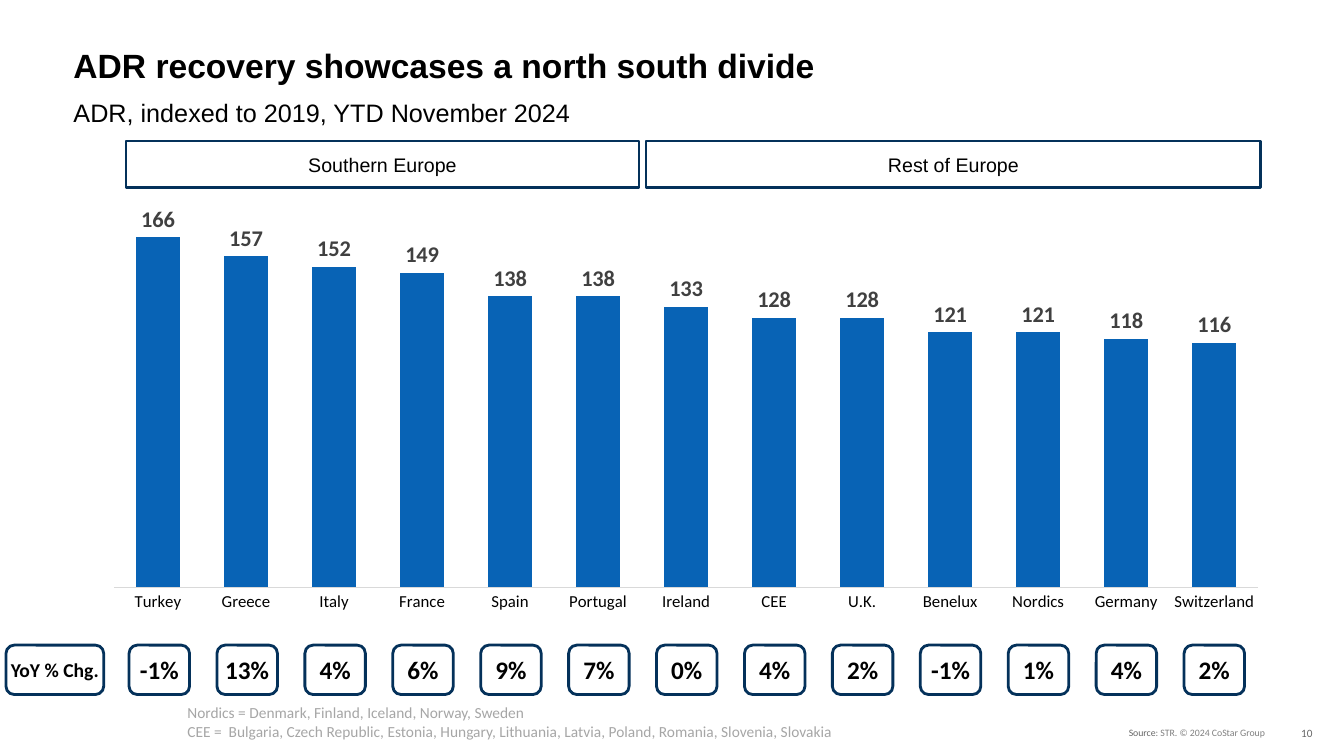
from lxml import etree
from pptx import Presentation
from pptx.chart.data import CategoryChartData
from pptx.dml.color import RGBColor
from pptx.enum.chart import XL_CHART_TYPE, XL_LABEL_POSITION, XL_TICK_MARK
from pptx.enum.shapes import MSO_SHAPE
from pptx.enum.text import MSO_ANCHOR, PP_ALIGN
from pptx.oxml.ns import qn
from pptx.util import Pt

COLUMNS = XL_CHART_TYPE.COLUMN_CLUSTERED
OUTSIDE_END = XL_LABEL_POSITION.OUTSIDE_END
NO_TICK = XL_TICK_MARK.NONE
RECTANGLE = MSO_SHAPE.RECTANGLE
ROUNDED = MSO_SHAPE.ROUNDED_RECTANGLE
TOP, MIDDLE = MSO_ANCHOR.TOP, MSO_ANCHOR.MIDDLE
LEFT, CENTER = PP_ALIGN.LEFT, PP_ALIGN.CENTER

BLACK = RGBColor(0x00, 0x00, 0x00)
WHITE = RGBColor(0xFF, 0xFF, 0xFF)
NAVY = RGBColor(0x04, 0x31, 0x5A)
BLUE = RGBColor(0x08, 0x63, 0xB5)
LABEL_GRAY = RGBColor(0x40, 0x40, 0x40)
FOOTER_GRAY = RGBColor(0x66, 0x66, 0x66)
SOURCE_GRAY = RGBColor(0x80, 0x80, 0x80)
NOTE_GRAY = RGBColor(0xA6, 0xA6, 0xA6)
AXIS_GRAY = RGBColor(0xD9, 0xD9, 0xD9)

MARKETS = [
    ("Turkey", 166, "-1%"), ("Greece", 157, "13%"), ("Italy", 152, "4%"),
    ("France", 149, "6%"), ("Spain", 138, "9%"), ("Portugal", 138, "7%"),
    ("Ireland", 133, "0%"), ("CEE", 128, "4%"), ("U.K.", 128, "2%"),
    ("Benelux", 121, "-1%"), ("Nordics", 121, "1%"), ("Germany", 118, "4%"),
    ("Switzerland", 116, "2%"),
]


def write(box, lines, size, font, bold=False, align=LEFT, anchor=TOP, spacing=None):
    frame = box.text_frame
    frame.vertical_anchor = anchor
    for index, line in enumerate(lines):
        para = frame.add_paragraph() if index else frame.paragraphs[0]
        para.alignment = align
        para.line_spacing = spacing
        for text, color in line:
            span = para.add_run()
            span.text = text
            span.font.size = Pt(size)
            span.font.name = font
            span.font.bold = bold
            span.font.color.rgb = color


def outlined(kind, left, top, width, height):
    box = page.shapes.add_shape(kind, Pt(left), Pt(top), Pt(width), Pt(height))
    box.shadow.inherit = False
    box.fill.solid()
    box.fill.fore_color.rgb = WHITE
    box.line.color.rgb = NAVY
    box.line.width = Pt(2)
    return box


deck = Presentation()
deck.slide_width, deck.slide_height = Pt(960), Pt(540)
page = deck.slides.add_slide(deck.slide_layouts[6])

data = CategoryChartData(number_format="0")
data.categories = [name for name, index, change in MARKETS]
data.add_series("Series 1", [index for name, index, change in MARKETS])
chart = page.shapes.add_chart(COLUMNS, Pt(46), Pt(107.3), Pt(864), Pt(368), data).chart
chart.has_legend = False
chart.has_title = False
chart.font.name = "Calibri"
chart.font.size = Pt(10)
chart.font.color.rgb = BLACK

plot = chart.plots[0]
plot.gap_width = 100
plot.overlap = -27
plot.vary_by_categories = False
bars = plot.series[0]
bars.format.fill.solid()
bars.format.fill.fore_color.rgb = BLUE
labels = bars.data_labels
labels.show_value = True
labels.position = OUTSIDE_END
labels.number_format = "#,##0"
labels.number_format_is_linked = False
labels.font.name = "Calibri"
labels.font.size = Pt(16)
labels.font.bold = True
labels.font.color.rgb = LABEL_GRAY

names = chart.category_axis
names.major_tick_mark = NO_TICK
names.minor_tick_mark = NO_TICK
names.tick_labels.font.name = "Calibri"
names.tick_labels.font.size = Pt(12)
names.tick_labels.font.color.rgb = BLACK
names.format.line.color.rgb = AXIS_GRAY
names.format.line.width = Pt(0.75)
scale = chart.value_axis
scale.visible = False
scale.has_major_gridlines = False
scale.minimum_scale = 0
scale.maximum_scale = 180

plot_area = chart.plots[0]._element.getparent()
for old_layout in plot_area.findall(qn("c:layout")):
    plot_area.remove(old_layout)
layout = etree.Element(qn("c:layout"))
plot_area.insert(0, layout)
manual = etree.SubElement(layout, qn("c:manualLayout"))
for tag, value in [("layoutTarget", "inner"), ("xMode", "edge"), ("yMode", "edge"),
                   ("x", "0.041"), ("y", "0.112"), ("w", "0.946"), ("h", "0.737")]:
    etree.SubElement(manual, qn("c:" + tag)).set("val", value)

title = [[("ADR recovery showcases a north south divide", BLACK)]]
subtitle = [[("ADR, indexed to 2019, YTD November 2024", BLACK)]]
notes = [
    [("Nordics = Denmark, Finland, Iceland, Norway, Sweden", NOTE_GRAY)],
    [("CEE =  Bulgaria, Czech Republic, Estonia, Hungary, Lithuania, Latvia, "
      "Poland, Romania, Slovenia, Slovakia", NOTE_GRAY)],
]
source = [[("Source", FOOTER_GRAY), (": STR. © 2024 CoStar Group", SOURCE_GRAY)]]
number = [[("10", FOOTER_GRAY)]]
for lines, left, top, width, height, size, font, bold, anchor, spacing in [
    (title, 45.4, 33.8, 900, 27.4, 24, "Arial", True, MIDDLE, Pt(26.7)),
    (subtitle, 45.4, 61.2, 865, 24.5, 18, "Arial", False, TOP, Pt(26.7)),
    (notes, 126.7, 499, 503, 34, 11, "Calibri", False, TOP, None),
    (source, 799.2, 515.5, 117.4, 16, 7, "Calibri", False, TOP, None),
    (number, 922.3, 516.2, 31, 14.4, 8, "Calibri", False, MIDDLE, None),
]:
    box = page.shapes.add_textbox(Pt(left), Pt(top), Pt(width), Pt(height))
    box.text_frame.word_wrap = True
    write(box, lines, size, font, bold, LEFT, anchor, spacing)

for region, left, width in [("Southern Europe", 90, 366.5), ("Rest of Europe", 461.5, 439.2)]:
    header = outlined(RECTANGLE, left, 100.8, width, 33.1)
    write(header, [[(region, BLACK)]], 14, "Arial", align=CENTER, anchor=MIDDLE)

badges = [("YoY % Chg.", 4.3, 69.8, 14)]
for column, (name, index, change) in enumerate(MARKETS):
    badges.append((change, 92.2 + 62.8 * column, 43.2, 18))
for text, left, width, size in badges:
    badge = outlined(ROUNDED, left, 460.8, width, 35.3)
    badge.text_frame.word_wrap = False
    write(badge, [[(text, BLACK)]], size, "Calibri", True, CENTER, MIDDLE)

deck.save("out.pptx")
